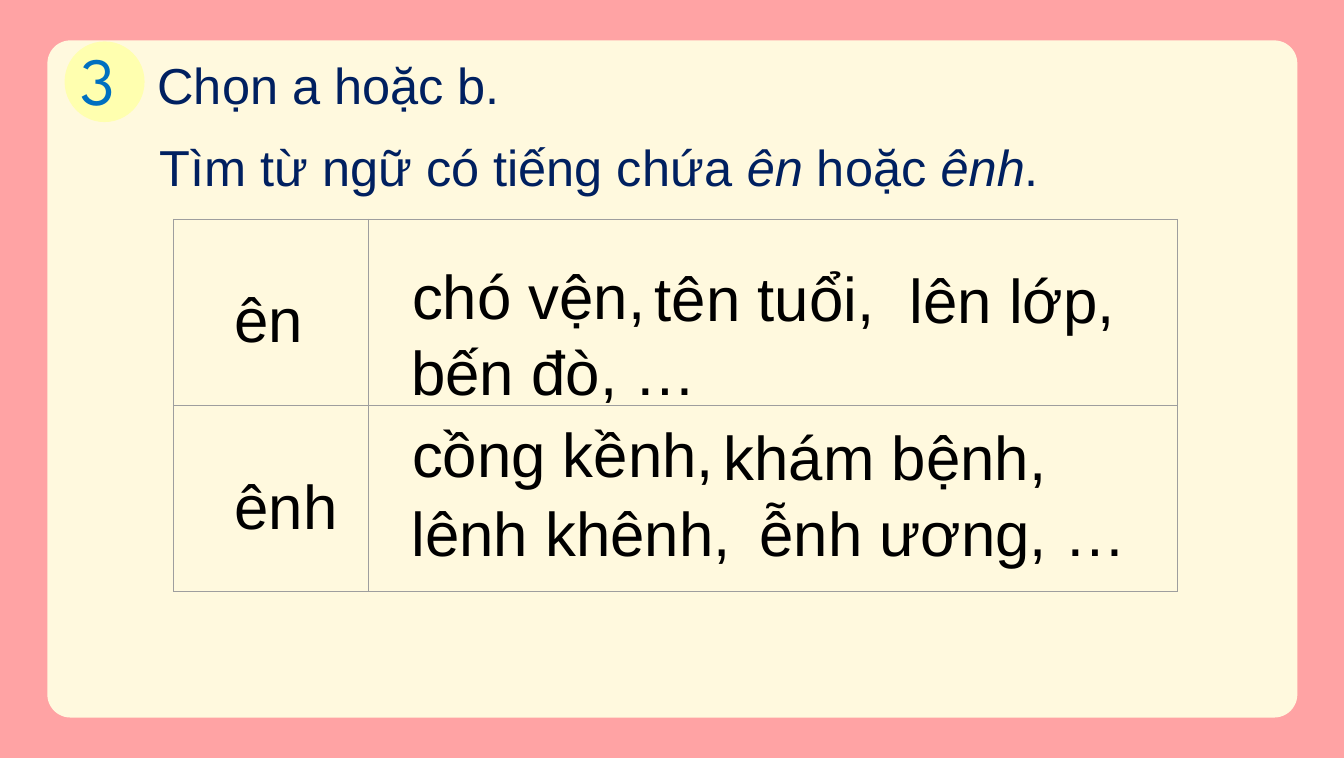
from lxml import etree
from pptx import Presentation
from pptx import util as u
from pptx.dml.color import RGBColor
from pptx.enum import shapes, text
from pptx.oxml.ns import qn

Pt = u.Pt
NAVY = "002060"
WORDS = [
    ("ên", 160, 196.5, 104.5),
    ("ênh", 160, 330, 104.5),
    ("chó vện,", 286.5, 180, 247),
    ("tên tuổi,", 459.5, 181.5, 283),
    ("lên lớp,", 641, 183, 283),
    ("bến đò, …", 286, 234, 283),
    ("cồng kềnh,", 286.5, 293, 283),
    ("khám bệnh,", 508.5, 295, 445),
    ("lênh khênh,", 286, 349, 445),
    ("ễnh ương, …", 534, 349, 445),
]


def color(value):
    return RGBColor.from_string(value)


def add_panel(s, kind, box, fill):
    sp = s.shapes.add_shape(kind, *map(Pt, box))
    sp.shadow.inherit = False
    sp.fill.solid()
    sp.fill.fore_color.rgb = color(fill)
    sp.line.fill.background()
    return sp


def write(sp, runs, size, fill, font="Arial", gap=0):
    tf = sp.text_frame
    tf.word_wrap = True
    tf.auto_size = text.MSO_AUTO_SIZE.SHAPE_TO_FIT_TEXT
    tf.vertical_anchor = text.MSO_ANCHOR.TOP
    p = tf.paragraphs[0]
    p.alignment = text.PP_ALIGN.JUSTIFY
    p.space_before = p.space_after = Pt(gap)
    p.font.size = Pt(size)
    p.font.name = font
    p.font.color.rgb = color(fill)
    for wording, italic in runs:
        r = p.add_run()
        r.text = wording
        if italic:
            r.font.italic = True
    return tf


def add_text(s, box, runs, size, fill, **style):
    sp = s.shapes.add_textbox(*map(Pt, box))
    return write(sp, runs, size, fill, **style)


def place_title(s, box, wording):
    sp = s.shapes.title
    sp.left, sp.top, sp.width, sp.height = map(Pt, box)
    write(sp, [(wording, False)], 36, NAVY)
    s.shapes.element.append(sp.element)


def add_number(s, wording):
    add_panel(s, shapes.MSO_SHAPE.OVAL, (46, 29.5, 57, 57.5), "FFFFAF")
    tf = add_text(s, (48.2, 37.4, 57.6, 37.4), [(wording, False)], 48,
                  "0070C0", font="League Spartan")
    tf.auto_size = text.MSO_AUTO_SIZE.NONE
    tf.vertical_anchor = text.MSO_ANCHOR.MIDDLE
    tf.margin_left = tf.margin_right = tf.margin_top = tf.margin_bottom = Pt(9.4)


def set_borders(cell, fill, width):
    pr = cell._tc.get_or_add_tcPr()
    for i, side in enumerate(("a:lnL", "a:lnR", "a:lnT", "a:lnB")):
        ln = etree.Element(qn(side), w=str(Pt(width)))
        solid = etree.SubElement(ln, qn("a:solidFill"))
        etree.SubElement(solid, qn("a:srgbClr"), val=fill)
        pr.insert(i, ln)


def add_grid(s, left, top, widths, heights):
    box = (left, top, sum(widths), sum(heights))
    tbl = s.shapes.add_table(len(heights), len(widths), *map(Pt, box)).table
    tbl.first_row = tbl.horz_banding = False
    for col, width in zip(tbl.columns, widths):
        col.width = Pt(width)
    for row, height in zip(tbl.rows, heights):
        row.height = Pt(height)
    for cell in tbl.iter_cells():
        cell.fill.background()
        set_borders(cell, "9E9E9E", 0.75)


def main():
    prs = Presentation()
    prs.slide_width, prs.slide_height = Pt(957.6), Pt(540)
    s = prs.slides.add_slide(prs.slide_layouts[5])
    s.background.fill.solid()
    s.background.fill.fore_color.rgb = color("FFA3A4")

    panel = add_panel(s, shapes.MSO_SHAPE.ROUNDED_RECTANGLE,
                      (33.8, 28.8, 890.6, 482.4), "FFF9DE")
    panel.adjustments[0] = 0.034
    add_number(s, "3")
    place_title(s, (105, 34.5, 805, 51), "Chọn a hoặc b.")
    add_text(s, (106.5, 93, 816, 51),
             [("Tìm từ ngữ có tiếng chứa ", False), ("ên", True),
              (" hoặc ", False), ("ênh", True), (".", False)], 36, NAVY)
    add_grid(s, 123.8, 156.2, (139, 576), (132.5, 132.5))
    for wording, left, top, width in WORDS:
        add_text(s, (left, top, width, 60.5), [(wording, False)], 44,
                 "000000", gap=12)
    prs.save("out.pptx")


if __name__ == "__main__":
    main()
